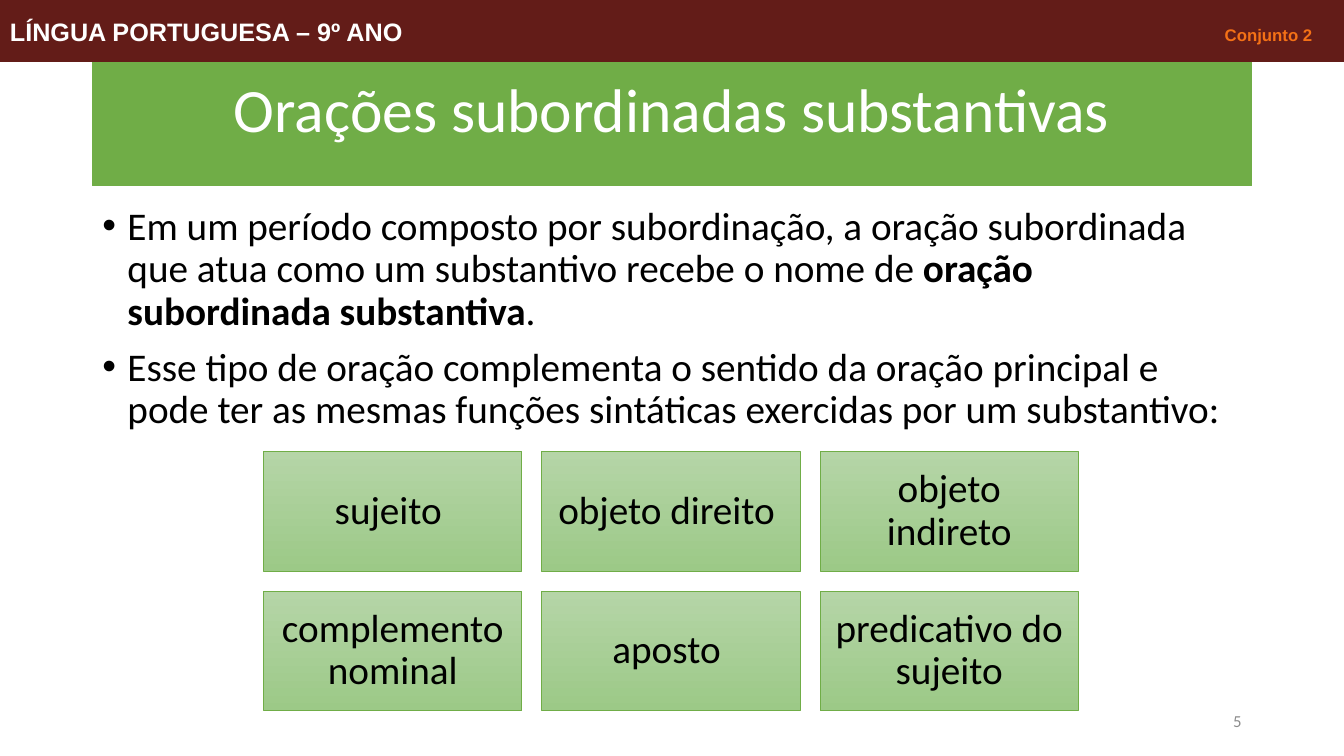
from dataclasses import dataclass

from lxml.etree import SubElement
from pptx import Presentation
from pptx.dml.color import RGBColor
from pptx.enum.shapes import MSO_SHAPE
from pptx.enum.text import MSO_ANCHOR, MSO_AUTO_SIZE, PP_ALIGN
from pptx.oxml.ns import qn
from pptx.shapes.autoshape import Shape
from pptx.slide import Slide
from pptx.text.text import Font
from pptx.util import Emu, Pt

EMU_PER_PX = 9525

WHITE = RGBColor(0xFF, 0xFF, 0xFF)
BLACK = RGBColor(0x00, 0x00, 0x00)
GREEN = RGBColor(0x70, 0xAD, 0x47)
TILE_TOP = RGBColor(0xB5, 0xD5, 0xA7)
TILE_BOTTOM = RGBColor(0x9C, 0xC9, 0x87)
MAROON = RGBColor(0x63, 0x1C, 0x18)
ORANGE = RGBColor(0xF4, 0x71, 0x16)
GRAY = RGBColor(0x8C, 0x8C, 0x8C)


@dataclass(frozen=True)
class Area:
    left: int
    top: int
    width: int
    height: int

    def emu(self) -> tuple[Emu, Emu, Emu, Emu]:
        return px(self.left), px(self.top), px(self.width), px(self.height)


@dataclass(frozen=True)
class Piece:
    text: str
    bold: bool = False


TITLE_AREA = Area(88, 38, 1104, 139)
BODY_AREA = Area(88, 192, 1104, 247)
FIRST_TILE = Area(251, 430, 246, 114)
NUMBER_AREA = Area(904, 667, 288, 38)
BANNER_AREA = Area(0, 0, 1280, 59)

TILE_COLUMNS = 3
TILE_STEP_X = 265
TILE_STEP_Y = 133
TILE_INSET = 12
BULLET_INDENT = 24
SET_NAME_TAB = 1157

BULLETS = [
    [
        Piece("Em um período composto por subordinação, a oração subordinada "
              "que atua como um substantivo recebe o nome de "),
        Piece("oração subordinada substantiva", bold=True),
        Piece("."),
    ],
    [
        Piece("Esse tipo de oração complementa o sentido da oração principal e "
              "pode ter as mesmas funções sintáticas exercidas por um substantivo:"),
    ],
]

FUNCTIONS = [
    "sujeito ", "objeto direito ", "objeto indireto",
    "complemento nominal", "aposto ", "predicativo do sujeito",
]


def px(length: int) -> Emu:
    return Emu(length * EMU_PER_PX)


def style(font: Font, size: int, color: RGBColor, name: str = "Calibri",
          bold: bool = False) -> None:
    font.name = name
    font.size = Pt(size)
    font.bold = bold
    font.color.rgb = color


def add_rectangle(page: Slide, area: Area, line: RGBColor, line_width: float) -> Shape:
    box = page.shapes.add_shape(MSO_SHAPE.RECTANGLE, *area.emu())
    box.shadow.inherit = False
    box.line.color.rgb = line
    box.line.width = Pt(line_width)
    box.text_frame.word_wrap = True
    box.text_frame.vertical_anchor = MSO_ANCHOR.MIDDLE
    return box


def add_title(page: Slide) -> None:
    title = page.shapes.title
    title.left, title.top, title.width, title.height = TITLE_AREA.emu()
    title.fill.solid()
    title.fill.fore_color.rgb = GREEN
    title.line.color.rgb = GREEN
    title.line.width = Pt(1)
    frame = title.text_frame
    frame.text = "Orações subordinadas substantivas"
    frame.auto_size = MSO_AUTO_SIZE.NONE
    frame.vertical_anchor = MSO_ANCHOR.MIDDLE
    para = frame.paragraphs[0]
    para.alignment = PP_ALIGN.CENTER
    para.line_spacing = 0.9
    style(para.runs[0].font, 44, WHITE)


def add_bullets(page: Slide) -> None:
    frame = page.shapes.add_textbox(*BODY_AREA.emu()).text_frame
    frame.word_wrap = True
    for index, pieces in enumerate(BULLETS):
        para = frame.add_paragraph() if index else frame.paragraphs[0]
        para.line_spacing = 0.9
        para.space_before = Pt(10)
        for piece in pieces:
            span = para.add_run()
            span.text = piece.text
            style(span.font, 28, BLACK, bold=piece.bold)
        properties = para._p.get_or_add_pPr()
        properties.set("marL", str(px(BULLET_INDENT)))
        properties.set("indent", str(px(-BULLET_INDENT)))
        SubElement(properties, qn("a:buFont"), typeface="Arial")
        SubElement(properties, qn("a:buChar"), char="•")


def add_tile(page: Slide, index: int, label: str) -> None:
    row, column = divmod(index, TILE_COLUMNS)
    area = Area(FIRST_TILE.left + column * TILE_STEP_X,
                FIRST_TILE.top + row * TILE_STEP_Y,
                FIRST_TILE.width, FIRST_TILE.height)
    tile = add_rectangle(page, area, GREEN, 0.5)
    tile.fill.gradient()
    tile.fill.gradient_angle = 270
    for stop, color, position in zip(tile.fill.gradient_stops,
                                     (TILE_TOP, TILE_BOTTOM), (0, 1)):
        stop.color.rgb = color
        stop.position = position
    frame = tile.text_frame
    frame.margin_left = frame.margin_right = px(TILE_INSET)
    frame.margin_top = frame.margin_bottom = px(TILE_INSET)
    frame.text = label
    para = frame.paragraphs[0]
    para.alignment = PP_ALIGN.CENTER
    para.line_spacing = 0.9
    style(para.runs[0].font, 28, BLACK)


def add_page_number(page: Slide) -> None:
    frame = page.shapes.add_textbox(*NUMBER_AREA.emu()).text_frame
    frame.word_wrap = True
    frame.vertical_anchor = MSO_ANCHOR.MIDDLE
    frame.text = "5"
    para = frame.paragraphs[0]
    para.alignment = PP_ALIGN.RIGHT
    style(para.runs[0].font, 12, GRAY)


def add_banner(page: Slide) -> None:
    banner = add_rectangle(page, BANNER_AREA, MAROON, 0.75)
    banner.fill.solid()
    banner.fill.fore_color.rgb = MAROON
    para = banner.text_frame.paragraphs[0]
    para.alignment = PP_ALIGN.LEFT
    for text, size, color in (("LÍNGUA PORTUGUESA – 9º ANO\t", 18, WHITE),
                              ("Conjunto 2", 12, ORANGE)):
        span = para.add_run()
        span.text = text
        style(span.font, size, color, "Arial", bold=True)
    # One tab stop places the set name at the right
    tabs = SubElement(para._p.get_or_add_pPr(), qn("a:tabLst"))
    SubElement(tabs, qn("a:tab"), pos=str(px(SET_NAME_TAB)), algn="l")


def main() -> None:
    deck = Presentation()
    deck.slide_width, deck.slide_height = px(1280), px(720)
    page = deck.slides.add_slide(deck.slide_layouts.get_by_name("Title Only"))

    # Title and explanation
    add_title(page)
    add_bullets(page)

    # Grid of syntactic functions
    for index, label in enumerate(FUNCTIONS):
        add_tile(page, index, label)

    # Page number, then the banner over the title's top edge
    add_page_number(page)
    add_banner(page)
    deck.save("out.pptx")


if __name__ == "__main__":
    main()
